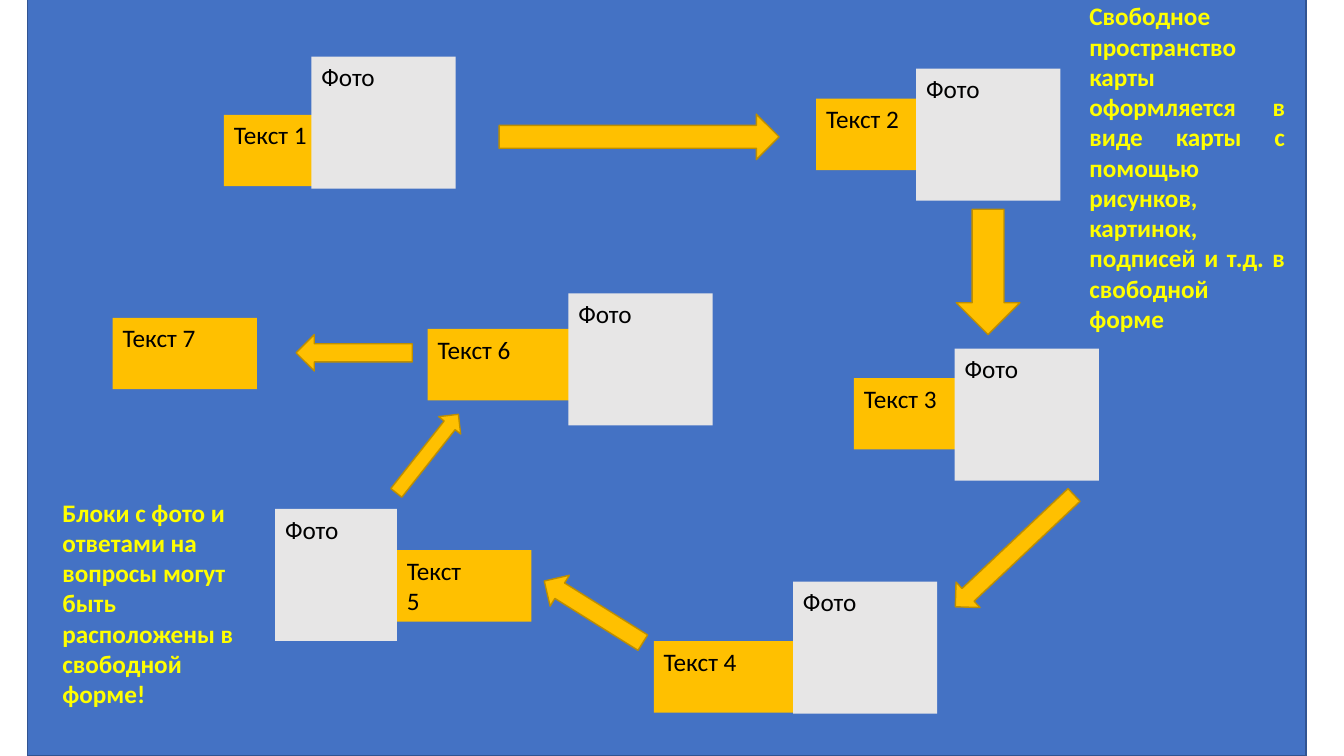
from collections import namedtuple

from pptx import Presentation
from pptx.dml.color import RGBColor
from pptx.enum.shapes import MSO_SHAPE
from pptx.enum.text import MSO_ANCHOR, PP_ALIGN
from pptx.util import Pt

Box = namedtuple("Box", "left top width height")

BLUE, DARK_BLUE = "4472C4", "325491"
AMBER, DARK_AMBER = "FFC000", "BD8E00"
GREY, BLACK, YELLOW = "E7E6E6", "000000", "FFFF00"
PHOTO_WIDTH, PHOTO_HEIGHT = 103, 94.3
CAPTION_HEIGHT = 51

STATIONS = [
    ("Текст 1", Box(222.5, 40.5, PHOTO_WIDTH, PHOTO_HEIGHT), -62.5, 41.5, 103),
    ("Текст 2", Box(654.5, 49, PHOTO_WIDTH, PHOTO_HEIGHT), -71.5, 21.5, 91),
    ("Текст 3", Box(682, 249, PHOTO_WIDTH, PHOTO_HEIGHT), -72, 21, 88),
    ("Текст 4", Box(566.5, 415.5, PHOTO_WIDTH, PHOTO_HEIGHT), -99.5, 42.5, 174),
    ("Текст\n5", Box(196.5, 363.5, 87, PHOTO_HEIGHT), 87, 29.5, 96),
    ("Текст 6", Box(406, 209.5, PHOTO_WIDTH, PHOTO_HEIGHT), -100.5, 25.5, 174),
]
ARROWS = [
    (Box(356.5, 81.5, 200, 32.5), 0),
    (Box(661, 171.5, 89.5, 45.5), 90),
    (Box(666.5, 381, 116.5, 25), 136.7),
    (Box(382.5, 424, 83, 26), 212),
    (Box(269.5, 314, 71.5, 20), 308.3),
    (Box(211.5, 239, 83, 26), 180),
]
NOTES = [
    ("Свободное пространство карты оформляется в виде карты с помощью рисунков, "
     "картинок, подписей и т.д. в свободной форме",
     Box(771, -3, 154, 247), PP_ALIGN.JUSTIFY),
    ("Блоки с фото и ответами на вопросы могут быть расположены в свободной форме!",
     Box(37.5, 351.5, 139, 160), PP_ALIGN.LEFT),
]


def color(hex_value):
    """Turn a hex string into a colour."""
    return RGBColor.from_string(hex_value)


def in_points(box):
    """Return the sides of a box as lengths."""
    return [Pt(side) for side in box]


def add_figure(slide, preset, box, fill, outline=None):
    """Add a flat preset shape, outlined when a line colour is given."""
    figure = slide.shapes.add_shape(preset, *in_points(box))
    figure.shadow.inherit = False
    figure.fill.solid()
    figure.fill.fore_color.rgb = color(fill)
    if outline:
        figure.line.color.rgb = color(outline)
        figure.line.width = Pt(1)
    else:
        figure.line.fill.background()
    return figure


def write(holder, words, ink, bold=False, align=PP_ALIGN.LEFT):
    """Put top-anchored 18 pt text into a shape."""
    frame = holder.text_frame
    frame.word_wrap = True
    frame.vertical_anchor = MSO_ANCHOR.TOP
    frame.text = words
    for paragraph in frame.paragraphs:
        paragraph.alignment = align
        for run in paragraph.runs:
            run.font.name = "Calibri"
            run.font.size = Pt(18)
            run.font.bold = bold
            run.font.color.rgb = color(ink)


def add_caption(slide, words, box):
    """Add an amber block with its text."""
    caption = add_figure(slide, MSO_SHAPE.RECTANGLE, box, AMBER)
    write(caption, words, BLACK)


def add_station(slide, words, box, shift_x, shift_y, caption_width):
    """Add a photo block in the box and its caption, shifted from it, beneath."""
    caption_box = Box(box.left + shift_x, box.top + shift_y, caption_width, CAPTION_HEIGHT)
    add_caption(slide, words, caption_box)
    photo = add_figure(slide, MSO_SHAPE.RECTANGLE, box, GREY)
    write(photo, "Фото", BLACK)


def add_arrow(slide, box, angle):
    """Add a block arrow turned by an angle."""
    arrow = add_figure(slide, MSO_SHAPE.RIGHT_ARROW, box, AMBER, DARK_AMBER)
    arrow.rotation = angle


def add_note(slide, words, box, align):
    """Add a bold yellow remark."""
    note = slide.shapes.add_textbox(*in_points(box))
    write(note, words, YELLOW, True, align)


def build_map(slide, box):
    """Lay out the route map on its blue field."""
    add_figure(slide, MSO_SHAPE.RECTANGLE, box, BLUE, DARK_BLUE)
    for station in STATIONS:
        add_station(slide, *station)
    for arrow in ARROWS:
        add_arrow(slide, *arrow)
    add_caption(slide, "Текст 7", Box(80.5, 227, 103, CAPTION_HEIGHT))
    for note in NOTES:
        add_note(slide, *note)


def main():
    """Build and save the presentation."""
    presentation = Presentation()
    presentation.slide_width = Pt(960)
    presentation.slide_height = Pt(540)
    slide = presentation.slides.add_slide(presentation.slide_layouts[6])
    build_map(slide, Box(19.5, -3, 913.5, 543))
    presentation.save("out.pptx")


if __name__ == "__main__":
    main()
